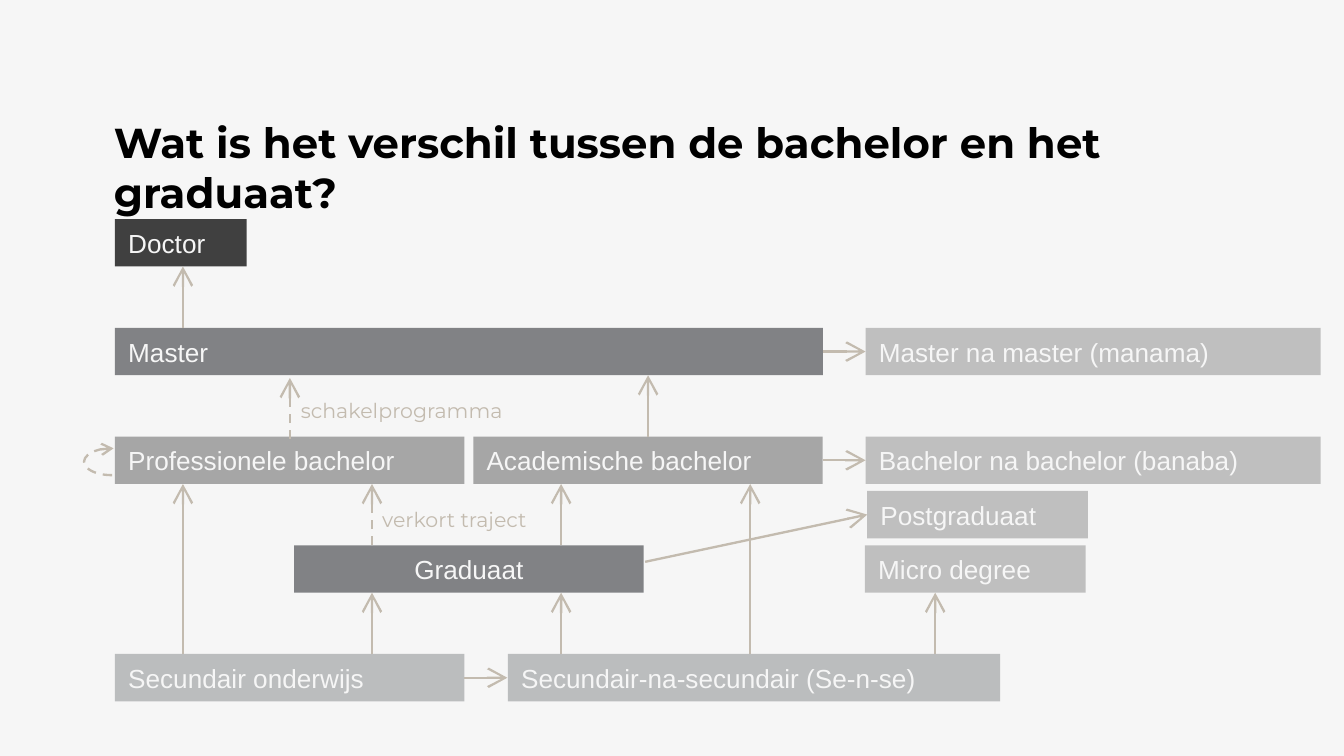
from dataclasses import dataclass

from lxml import etree
from pptx import Presentation
from pptx.dml.color import RGBColor
from pptx.enum import dml, shapes, text
from pptx.oxml import ns
from pptx.util import Pt

COLORS = {
    "back": "F6F6F6", "title": "000000", "arrow": "C3BBAF", "doctor": "404040",
    "degree": "818285", "bachelor": "A6A6A6", "extra": "BFBFBF", "school": "BBBDBE",
}
DOCTOR, MASTER, BACHELOR, GRADUATE, SCHOOL = range(5)
LEFT, HALF, FULL, EXTRA_X = 61.6, 187.2, 379.2, 463.7
BOX_H, ROW_TOP, ROW_STEP = 25.4, 117.4, 58.25
COLUMNS = [98 + 101.3 * i for i in range(4)]


@dataclass
class Box:
    label: str
    row: float
    x: float
    w: float
    color: str
    align: text.PP_ALIGN = text.PP_ALIGN.LEFT


@dataclass
class Label:
    label: str
    x: float
    y: float
    w: float
    h: float
    size: float
    color: str
    bold: bool = False
    anchor: text.MSO_ANCHOR = text.MSO_ANCHOR.MIDDLE


@dataclass
class Arrow:
    x1: float
    y1: float
    x2: float
    y2: float
    dashed: bool = False


def rgb(name: str) -> RGBColor:
    return RGBColor.from_string(COLORS[name])


def top(row: float) -> float:
    return ROW_TOP + ROW_STEP * row


def bottom(row: float) -> float:
    return top(row) + BOX_H


def middle(row: float) -> float:
    return top(row) + BOX_H / 2


def up(x: float, start: int, end: int, dashed: bool = False) -> Arrow:
    return Arrow(x, top(start), x, bottom(end), dashed)


def across(row: int, x1: float, x2: float) -> Arrow:
    return Arrow(x1, middle(row), x2, middle(row))


def write(sp, label: str, font: str, size: float, color: str, bold: bool = False,
          align=text.PP_ALIGN.LEFT, anchor=text.MSO_ANCHOR.MIDDLE) -> None:
    tf = sp.text_frame
    tf.word_wrap = True
    tf.vertical_anchor = anchor
    p = tf.paragraphs[0]
    p.text, p.alignment = label, align
    p.font.name, p.font.size, p.font.bold = font, Pt(size), bold
    p.font.color.rgb = rgb(color)


def add_box(s, box: Box) -> None:
    sp = s.shapes.add_shape(shapes.MSO_SHAPE.RECTANGLE, Pt(box.x), Pt(top(box.row)),
                            Pt(box.w), Pt(BOX_H))
    sp.shadow.inherit = False
    sp.fill.solid()
    sp.fill.fore_color.rgb = rgb(box.color)
    sp.line.fill.background()
    write(sp, box.label, "Arial", 14, "back", align=box.align)


def add_label(s, item: Label) -> None:
    sp = s.shapes.add_textbox(Pt(item.x), Pt(item.y), Pt(item.w), Pt(item.h))
    write(sp, item.label, "Montserrat", item.size, item.color, item.bold, anchor=item.anchor)


def style_arrow(sp, dashed: bool, head: str) -> None:
    sp.line.color.rgb = rgb("arrow")
    sp.line.width = Pt(1.25)
    if dashed:
        sp.line.dash_style = dml.MSO_LINE.DASH
    ln = sp.element.spPr.find(ns.qn("a:ln"))
    etree.SubElement(ln, ns.qn("a:tailEnd"), type="arrow", w=head, len=head)


def add_arrow(s, arrow: Arrow) -> None:
    sp = s.shapes.add_connector(shapes.MSO_CONNECTOR.STRAIGHT, Pt(arrow.x1), Pt(arrow.y1),
                                Pt(arrow.x2), Pt(arrow.y2))
    style_arrow(sp, arrow.dashed, "lg")
    etree.SubElement(sp.element.spPr, ns.qn("a:effectLst"))


def add_loop(s) -> None:
    sp = s.shapes.add_shape(shapes.MSO_SHAPE.ARC, Pt(52.6), Pt(232.6), Pt(14.4), Pt(29.5))
    sp.shadow.inherit = False
    sp.rotation = 270
    sp.adjustments[0], sp.adjustments[1] = 106.88, 5.17
    sp.fill.background()
    style_arrow(sp, True, "med")


LABELS = [
    Label("Wat is het verschil tussen de bachelor en het graduaat?", 54, 59, 612, 54,
          22.4, "title", True, text.MSO_ANCHOR.TOP),
    Label("verkort traject", 197.7, 265.7, 141, 25.4, 11, "arrow"),
    Label("schakelprogramma", 154.1, 207.2, 141, 25.4, 11, "arrow"),
]
BOXES = [
    Box("Doctor", DOCTOR, LEFT, 70.6, "doctor"),
    Box("Master", MASTER, LEFT, FULL, "degree"),
    Box("Master na master (manama)", MASTER, EXTRA_X, 243.8, "extra"),
    Box("Professionele bachelor", BACHELOR, LEFT, HALF, "bachelor"),
    Box("Academische bachelor", BACHELOR, LEFT + FULL - HALF, HALF, "bachelor"),
    Box("Bachelor na bachelor (banaba)", BACHELOR, EXTRA_X, 243.8, "extra"),
    Box("Postgraduaat", BACHELOR + 0.5, 464.6, 118.2, "extra"),
    Box("Graduaat", GRADUATE, 157.6, HALF, "degree", text.PP_ALIGN.CENTER),
    Box("Micro degree", GRADUATE, 463.4, 118.2, "extra"),
    Box("Secundair onderwijs", SCHOOL, LEFT, HALF, "school"),
    Box("Secundair-na-secundair (Se-n-se)", SCHOOL, 272.1, 263.7, "school"),
]
ARROWS = [
    up(COLUMNS[0], MASTER, DOCTOR),
    Arrow(155.3, 235.4, 155.3, 202.5, True),
    up(347.2, BACHELOR, MASTER),
    up(COLUMNS[1], GRADUATE, BACHELOR, True),
    up(COLUMNS[2], GRADUATE, BACHELOR),
    up(COLUMNS[0], SCHOOL, BACHELOR),
    up(COLUMNS[3], SCHOOL, BACHELOR),
    up(COLUMNS[1], SCHOOL, GRADUATE),
    up(COLUMNS[2], SCHOOL, GRADUATE),
    up(501, SCHOOL, GRADUATE),
    across(MASTER, LEFT + FULL, EXTRA_X),
    across(BACHELOR, LEFT + FULL, EXTRA_X),
    across(SCHOOL, LEFT + HALF, 271.8),
    Arrow(345.6, 301, 464.6, middle(BACHELOR + 0.5)),
]


def main() -> None:
    """Build the slide on the difference between bachelor and graduaat."""
    prs = Presentation()
    prs.slide_width, prs.slide_height = Pt(720), Pt(405)
    s = prs.slides.add_slide(prs.slide_layouts[6])
    s.background.fill.solid()
    s.background.fill.fore_color.rgb = rgb("back")
    for item in LABELS:
        add_label(s, item)
    for box in BOXES:
        add_box(s, box)
    for arrow in ARROWS:
        add_arrow(s, arrow)
    add_loop(s)
    prs.save("out.pptx")


if __name__ == "__main__":
    main()
